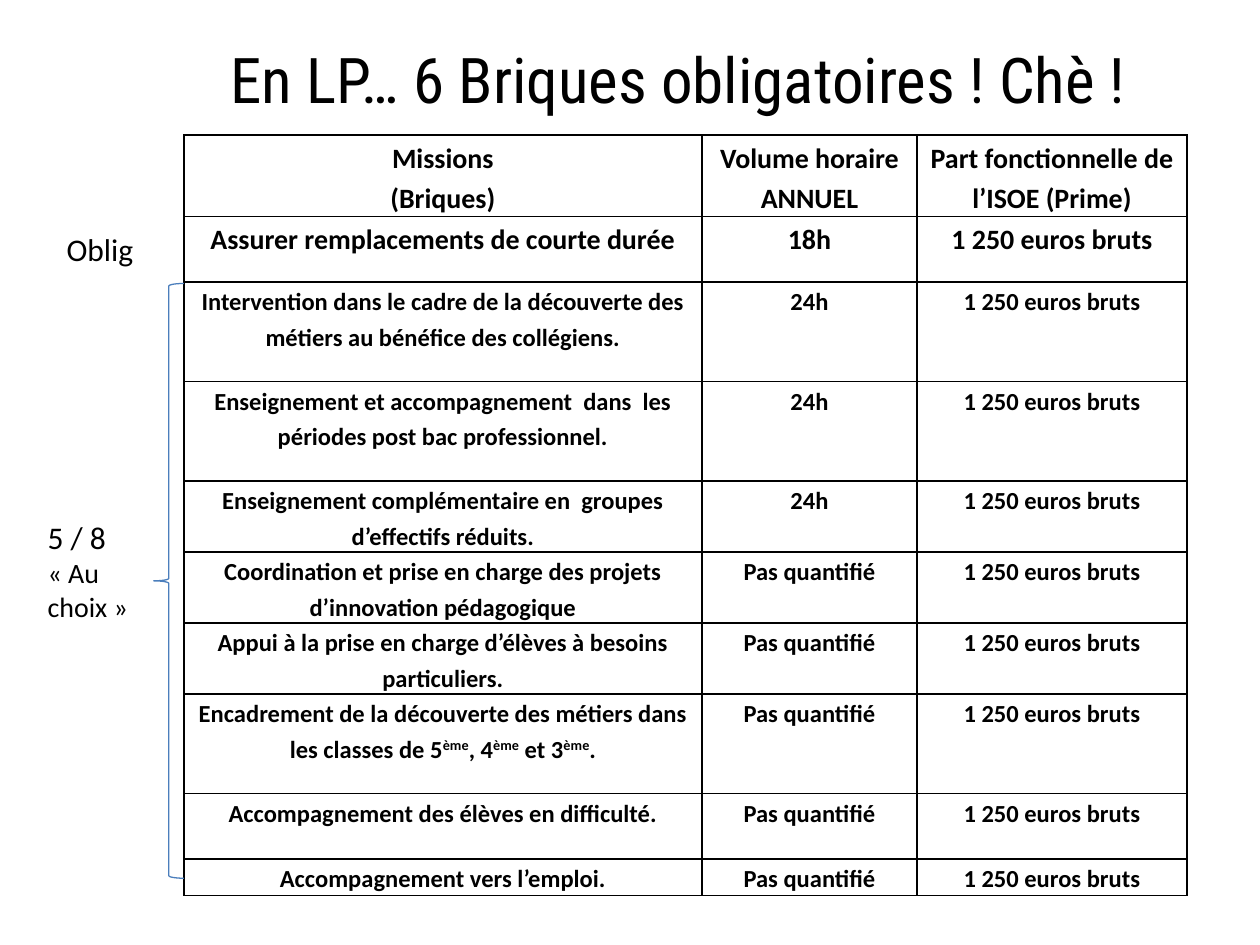
from lxml import etree
from pptx import Presentation
from pptx.dml.color import RGBColor
from pptx.enum.shapes import MSO_SHAPE
from pptx.enum.text import MSO_ANCHOR, PP_ALIGN
from pptx.oxml.ns import qn
from pptx.util import Inches, Pt

BLACK = RGBColor(0x00, 0x00, 0x00)
BLUE = RGBColor(0x4B, 0x7E, 0xBC)
CENTER = PP_ALIGN.CENTER
TOP, MIDDLE = MSO_ANCHOR.TOP, MSO_ANCHOR.MIDDLE
BRACE = MSO_SHAPE.LEFT_BRACE
BODY, HEAD = "Calibri", "Roboto Condensed"
UNIT = Inches(0.1)
LEFT, UP = 14.6, 10.7
COLS = [41.1, 17.1, 21.4]
PRIZE = "1 250 euros bruts"
FREE = "Pas quantifié"

ROWS = [
    (6.4, 16, "Missions\n(Briques)", "Volume horaire ANNUEL",
     "Part fonctionnelle de l’ISOE (Prime)"),
    (5.2, 16, "Assurer remplacements de courte durée", "18h", PRIZE),
    (7.9, 14, "Intervention dans le cadre de la découverte des métiers "
     "au bénéfice des collégiens.", "24h", PRIZE),
    (7.9, 14, "Enseignement et accompagnement  dans  les périodes "
     "post bac professionnel.", "24h", PRIZE),
    (5.6, 14, "Enseignement complémentaire en  groupes d’effectifs réduits.",
     "24h", PRIZE),
    (5.6, 14, "Coordination et prise en charge des projets d’innovation "
     "pédagogique", FREE, PRIZE),
    (5.6, 14, "Appui à la prise en charge d’élèves à besoins particuliers.",
     FREE, PRIZE),
    (7.9, 14, "Encadrement de la découverte des métiers dans les classes de "
     "5^ème^, 4^ème^ et 3^ème^.", FREE, PRIZE),
    (5.2, 14, "Accompagnement des élèves en difficulté.", FREE, PRIZE),
    (2.9, 14, "Accompagnement vers l’emploi.", FREE, PRIZE),
]


def grid(*cells):
    """Turn grid units into slide lengths."""
    return [round(n * UNIT) for n in cells]


def style(item, **values):
    """Set each named value on the item."""
    for name, value in values.items():
        setattr(item, name, value)


def write(para, text, size, face=BODY, bold=False):
    """Fill a paragraph, raising the parts between carets."""
    for i, part in enumerate(text.split("^")):
        run = para.add_run()
        run.text = part
        style(run.font, name=face, size=Pt(size), bold=bold)
        run.font.color.rgb = BLACK
        if i % 2:
            run.font._element.set("baseline", "30000")


def lines(frame, items):
    """Yield one paragraph of the frame with each item."""
    for i, item in enumerate(items):
        yield frame.add_paragraph() if i else frame.paragraphs[0], item


def border(cell):
    """Draw a thin black line on all four sides of a cell."""
    props = cell._tc.get_or_add_tcPr()
    for i, side in enumerate(("a:lnL", "a:lnR", "a:lnT", "a:lnB")):
        line = etree.Element(qn(side), w=str(Pt(1)))
        fill = etree.SubElement(line, qn("a:solidFill"))
        etree.SubElement(fill, qn("a:srgbClr"), val=str(BLACK))
        props.insert(i, line)


def fill_cell(cell, text, size):
    """Write and format one table cell."""
    side = Inches(0.07)
    style(cell, margin_left=side, margin_right=side, margin_top=0,
          margin_bottom=0, vertical_anchor=TOP)
    cell.fill.background()
    border(cell)
    for para, line in lines(cell.text_frame, text.split("\n")):
        style(para, alignment=CENTER, line_spacing=1.19)
        write(para, line, size, bold=True)


def add_grid(slide):
    """Add the table of missions."""
    high = sum(row[0] for row in ROWS)
    table = slide.shapes.add_table(
        len(ROWS), len(COLS), *grid(LEFT, UP, sum(COLS), high)).table
    style(table, first_row=False, horz_banding=False)
    for col, wide in zip(table.columns, COLS):
        col.width = round(wide * UNIT)
    for row, (tall, size, *texts) in zip(table.rows, ROWS):
        row.height = round(tall * UNIT)
        for cell, text in zip(row.cells, texts):
            fill_cell(cell, text, size)


def add_title(slide, text):
    """Place and fill the title."""
    title = slide.shapes.title
    title.left, title.top, title.width, title.height = grid(LEFT, 0, 79.6, 12.5)
    frame = title.text_frame
    frame.vertical_anchor = MIDDLE
    para = frame.paragraphs[0]
    para.alignment = CENTER
    write(para, text, 36, HEAD)


def add_brace(slide, *place):
    """Add a thin blue brace."""
    brace = slide.shapes.add_shape(BRACE, *grid(*place))
    brace.shadow.inherit = False
    brace.fill.background()
    brace.line.color.rgb = BLUE
    brace.line.width = Pt(0.75)


def add_label(slide, place, items):
    """Add a side label of sized lines."""
    frame = slide.shapes.add_textbox(*grid(*place)).text_frame
    frame.word_wrap = True
    for para, (text, size) in lines(frame, items):
        write(para, text, size)


def main():
    """Build and save the slide."""
    deck = Presentation()
    style(deck, slide_width=100 * UNIT, slide_height=75 * UNIT)
    slide = deck.slides.add_slide(deck.slide_layouts[5])
    add_title(slide, "En LP… 6 Briques obligatoires ! Chè ! ")
    add_grid(slide)
    add_brace(slide, 12.2, 22.5, 2.4, 47.2)
    add_label(slide, (2.8, 40.6, 8.7, 9.4),
              [("5 / 8", 18), ("« Au choix »", 16)])
    add_label(slide, (4.3, 17.8, 8.7, 4), [("Oblig", 18)])
    deck.save("out.pptx")


if __name__ == "__main__":
    main()
